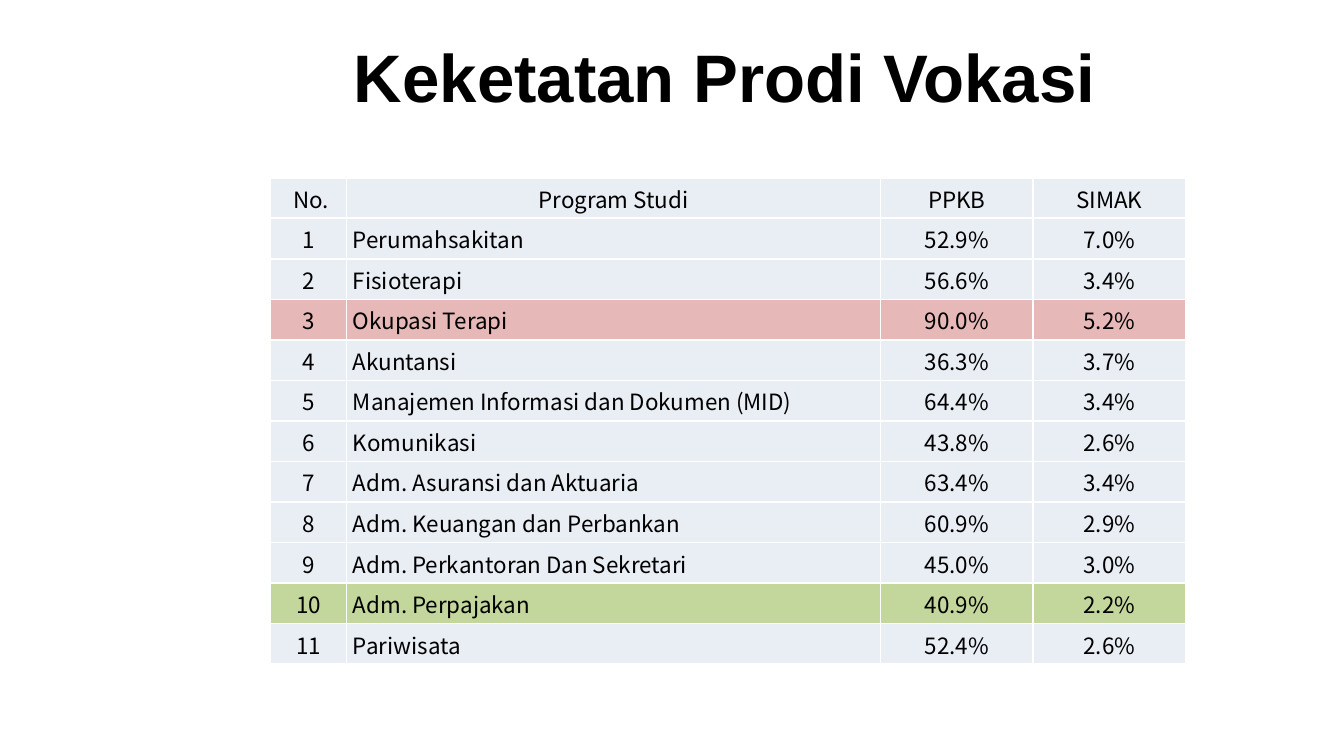
from lxml import etree
from pptx import Presentation
from pptx.dml.color import RGBColor
from pptx.enum.text import MSO_ANCHOR as Anchor, PP_ALIGN as Align
from pptx.oxml.ns import qn
from pptx.util import Cm, Pt

COLORS = {
    "text": "000000",
    "border": "FFFFFF",
    "plain": "E9EDF4",
    "highest": "E6B9B8",
    "lowest": "C3D69B",
}
HEADER = ("No.", "Program Studi", "PPKB", "SIMAK")
PROGRAMS = [
    ("Perumahsakitan", "52.9%", "7.0%"),
    ("Fisioterapi", "56.6%", "3.4%"),
    ("Okupasi Terapi", "90.0%", "5.2%"),
    ("Akuntansi", "36.3%", "3.7%"),
    ("Manajemen Informasi dan Dokumen (MID)", "64.4%", "3.4%"),
    ("Komunikasi", "43.8%", "2.6%"),
    ("Adm. Asuransi dan Aktuaria", "63.4%", "3.4%"),
    ("Adm. Keuangan dan Perbankan", "60.9%", "2.9%"),
    ("Adm. Perkantoran Dan Sekretari", "45.0%", "3.0%"),
    ("Adm. Perpajakan", "40.9%", "2.2%"),
    ("Pariwisata", "52.4%", "2.6%"),
]
ROW_COLORS = {3: "highest", 10: "lowest"}
COLUMN_SHARES = (1, 7, 2, 2)


def color(name):
    return RGBColor.from_string(COLORS[name])


def write(para, text, font_name, size, align, bold=False):
    para.text = text
    para.alignment = align
    font = para.font
    font.name, font.size, font.bold = font_name, Pt(size), bold
    font.color.rgb = color("text")


def add_title(page, left, top, width, height):
    box = page.shapes.add_textbox(left, top, width, height)
    frame = box.text_frame
    frame.word_wrap = True
    frame.vertical_anchor = Anchor.MIDDLE
    write(frame.paragraphs[0], "Keketatan Prodi Vokasi", "Arial", 36, Align.CENTER, bold=True)


def add_borders(cell):
    properties = cell._tc.get_or_add_tcPr()
    for side in ("lnL", "lnR", "lnT", "lnB"):
        line = etree.SubElement(properties, qn(f"a:{side}"), w=str(Pt(1)))
        fill = etree.SubElement(line, qn("a:solidFill"))
        etree.SubElement(fill, qn("a:srgbClr"), val=COLORS["border"])


def fill_cell(cell, text, fill_name, align, indented):
    cell.margin_left = Cm(0.12 if indented else 0.02)
    cell.margin_right = cell.margin_top = Cm(0.02)
    cell.margin_bottom = 0
    cell.vertical_anchor = Anchor.MIDDLE
    add_borders(cell)
    cell.fill.solid()
    cell.fill.fore_color.rgb = color(fill_name)
    write(cell.text_frame.paragraphs[0], text, "Noto Sans CJK KR", 12, align)


def add_program_table(page, left, top, width, height):
    numbered = [(str(number), *program) for number, program in enumerate(PROGRAMS, 1)]
    rows = [HEADER, *numbered]
    table = page.shapes.add_table(len(rows), len(HEADER), left, top, width, height).table
    for column, share in zip(table.columns, COLUMN_SHARES):
        column.width = width * share // sum(COLUMN_SHARES)
    for r, values in enumerate(rows):
        table.rows[r].height = height // len(rows)
        for c, text in enumerate(values):
            is_name = r > 0 and c == 1
            fill_cell(
                table.cell(r, c),
                text,
                ROW_COLORS.get(r, "plain"),
                Align.LEFT if is_name else Align.CENTER,
                indented=is_name or (r, c) == (0, 0),
            )


def main():
    deck = Presentation()
    deck.slide_width, deck.slide_height = Cm(25.4), Cm(14.29)
    page = deck.slides.add_slide(deck.slide_layouts[6])
    add_title(page, Cm(2.7), Cm(0.71), Cm(22), Cm(1.45))
    add_program_table(page, Cm(5.11), Cm(3.36), Cm(17.3), Cm(9.2))
    deck.save("out.pptx")


if __name__ == "__main__":
    main()
